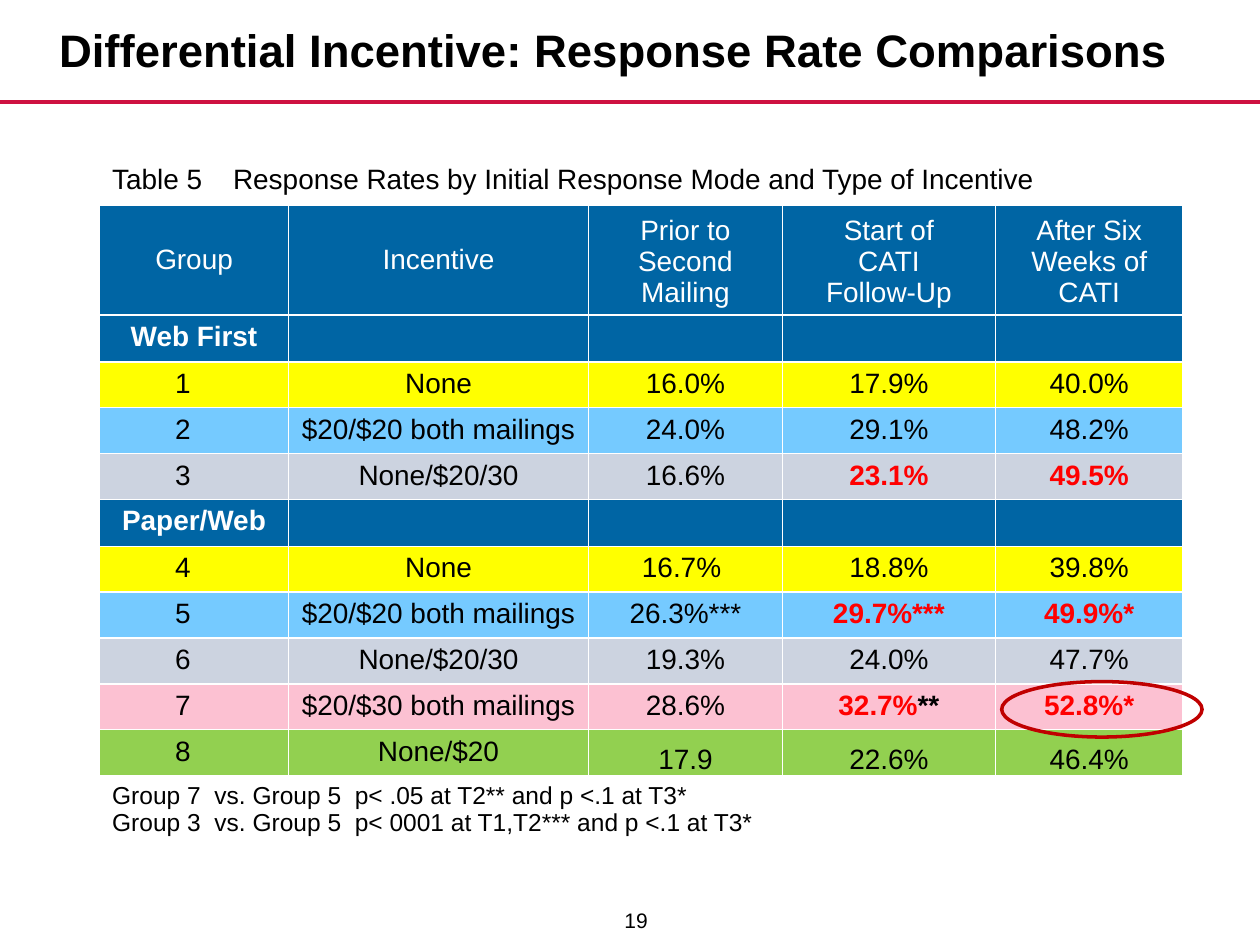
"""Build the slide comparing response rates by incentive group."""
import pptx
import pptx.dml.color
import pptx.enum.shapes
import pptx.enum.text
import pptx.oxml
import pptx.oxml.ns
import pptx.util
from lxml import etree

Inches = pptx.util.Inches
Pt = pptx.util.Pt
ALIGN = pptx.enum.text.PP_ALIGN
ANCHOR = pptx.enum.text.MSO_ANCHOR
FONT = "Arial"
COLORS = {
    "black": "000000", "white": "FFFFFF", "red": "FF0000", "crimson": "CE1141",
    "ring": "C00000", "header": "0065A4", "yellow": "FFFF00", "sky": "75CAFF",
    "gray": "CCD3E0", "pink": "FCC1D2", "green": "92D050",
}

TITLE = "Differential Incentive: Response Rate Comparisons"
PAGE_NUMBER = "19"
CAPTION = "Table 5\tResponse Rates by Initial Response Mode and Type of Incentive"
HEADINGS = [
    ["Group"], ["Incentive"], ["Prior to", "Second", "Mailing"],
    ["Start of", "CATI", "Follow-Up"], ["After Six\vWeeks of\vCATI"],
]
BODY = [
    ("header", ["Web First"]),
    ("yellow", ["1", "None", "16.0%", "17.9%", "40.0%"]),
    ("sky", ["2", "$20/$20 both mailings", "24.0%", "29.1%", "48.2%"]),
    ("gray", ["3", "None/$20/30", "16.6%", "23.1%", "49.5%"]),
    ("header", ["Paper/Web"]),
    ("yellow", ["4", "None", "16.7% ", "18.8%", "39.8%"]),
    ("sky", ["5", "$20/$20 both mailings", "26.3%***", "29.7%***", "49.9%*"]),
    ("gray", ["6", "None/$20/30", "19.3%", "24.0%", "47.7%"]),
    ("pink", ["7", "$20/$30 both mailings", "28.6%", "32.7%|**", "52.8%*"]),
    ("green", ["8", "None/$20", "17.9", "22.6%", "46.4%"]),
]
HIGHLIGHTS = {"23.1%", "49.5%", "29.7%***", "49.9%*", "32.7%|**", "52.8%*"}
FOOTNOTES = [
    "Group 7  vs. Group 5  p< .05 at T2** and p <.1 at T3*",
    "Group 3  vs. Group 5  p< 0001 at T1,T2*** and p <.1 at T3*",
]
COLUMN_WIDTHS = [1.5, 2.38, 1.54, 1.69, 1.49]
BODY_HEIGHT = 3.64
ROW_HEIGHTS = [0.38, 0.88] + [BODY_HEIGHT / len(BODY)] * len(BODY) + [1.09]


def rgb(name):
    return pptx.dml.color.RGBColor.from_string(COLORS[name])


def add_run(paragraph, text, size, color="black", bold=False):
    run = paragraph.add_run()
    run.text = text
    run.font.name = FONT
    run.font.size = Pt(size)
    run.font.bold = bold
    run.font.color.rgb = rgb(color)


def write_lines(frame, lines, size, color="black", bold=False, align=ALIGN.LEFT):
    for index, line in enumerate(lines):
        paragraph = frame.add_paragraph() if index else frame.paragraphs[0]
        paragraph.alignment = align
        for part_index, part in enumerate(line.split("\v")):
            if part_index:
                paragraph.add_line_break()
            add_run(paragraph, part, size, color, bold)


def add_text(slide, box, text, size, bold, align):
    frame = slide.shapes.add_textbox(*map(Inches, box)).text_frame
    frame.word_wrap = True
    frame.vertical_anchor = ANCHOR.MIDDLE
    write_lines(frame, [text], size, bold=bold, align=align)


def set_borders(cell, bottom=1):
    properties = cell._tc.get_or_add_tcPr()
    widths = {"lnL": 1, "lnR": 1, "lnT": 1, "lnB": bottom}
    for position, (side, width) in enumerate(widths.items()):
        border = pptx.oxml.parse_xml(
            f'<a:{side} {pptx.oxml.ns.nsdecls("a")} w="{Pt(width)}"><a:solidFill>'
            f'<a:srgbClr val="{COLORS["white"]}"/></a:solidFill></a:{side}>')
        properties.insert(position, border)


def fill_cell(cell, color):
    cell.fill.solid()
    cell.fill.fore_color.rgb = rgb(color)


def write_body_cell(cell, text, column, band):
    paragraph = cell.text_frame.paragraphs[0]
    paragraph.alignment = ALIGN.CENTER
    if not text:
        end = etree.SubElement(paragraph._p, pptx.oxml.ns.qn("a:endParaRPr"))
        end.set("sz", "1600")
    elif band == "header":
        add_run(paragraph, text, 16, "white", True)
    else:
        if column == 0:
            paragraph.alignment = ALIGN.LEFT
            paragraph.level = 1
            properties = paragraph._p.get_or_add_pPr()
            properties.set("marL", str(Inches(0.5)))
            properties.set("indent", "0")
        strong = text in HIGHLIGHTS
        value, _, mark = text.partition("|")
        add_run(paragraph, value, 16, "red" if strong else "black", strong)
        if mark:
            add_run(paragraph, mark, 16, bold=True)
    if band == "green" and column >= 2:
        cell.vertical_anchor = ANCHOR.BOTTOM
        cell.margin_left = cell.margin_right = cell.margin_top = Inches(0.01)
        cell.margin_bottom = 0


def add_rate_table(slide):
    columns, rows = len(COLUMN_WIDTHS), len(ROW_HEIGHTS)
    table = slide.shapes.add_table(
        rows, columns, Inches(0.79), Inches(1.24),
        Inches(sum(COLUMN_WIDTHS)), Inches(sum(ROW_HEIGHTS))).table
    table.first_row = table.horz_banding = False
    for column, width in zip(table.columns, COLUMN_WIDTHS):
        column.width = Inches(width)
    for row, height in zip(table.rows, ROW_HEIGHTS):
        row.height = Inches(height)

    for row in (0, rows - 1):
        table.cell(row, 0).merge(table.cell(row, columns - 1))
        for column in range(columns):
            table.cell(row, column).fill.background()
    caption, footer = table.cell(0, 0), table.cell(rows - 1, 0)
    caption.vertical_anchor = ANCHOR.MIDDLE
    properties = caption.text_frame.paragraphs[0]._p.get_or_add_pPr()
    tabs = etree.SubElement(properties, pptx.oxml.ns.qn("a:tabLst"))
    etree.SubElement(tabs, pptx.oxml.ns.qn("a:tab"), pos=str(Inches(0.96)), algn="l")
    write_lines(caption.text_frame, [CAPTION], 16)
    write_lines(footer.text_frame, FOOTNOTES, 14)

    for column, lines in enumerate(HEADINGS):
        cell = table.cell(1, column)
        cell.vertical_anchor = ANCHOR.MIDDLE if column < 2 else ANCHOR.BOTTOM
        fill_cell(cell, "header")
        write_lines(cell.text_frame, lines, 16, "white", align=ALIGN.CENTER)
    for row, (band, texts) in enumerate(BODY, start=2):
        for column in range(columns):
            cell = table.cell(row, column)
            fill_cell(cell, band)
            text = texts[column] if column < len(texts) else ""
            write_body_cell(cell, text, column, band)
    for row in range(rows):
        for column in range(columns):
            set_borders(table.cell(row, column), bottom=1 if row else 3)


def main():
    presentation = pptx.Presentation()
    presentation.slide_width, presentation.slide_height = Inches(10), Inches(7.5)
    slide = presentation.slides.add_slide(presentation.slide_layouts[6])

    rule = slide.shapes.add_connector(
        pptx.enum.shapes.MSO_CONNECTOR.STRAIGHT,
        0, Inches(0.81), Inches(10), Inches(0.81))
    rule.line.color.rgb = rgb("crimson")
    rule.line.width = Pt(2)
    etree.SubElement(rule._element.spPr, pptx.oxml.ns.qn("a:effectLst"))

    add_rate_table(slide)
    add_text(slide, (0, 0.03, 9.74, 0.73), TITLE, 26, True, ALIGN.CENTER)
    add_text(slide, (4.76, 7.1, 0.48, 0.4), PAGE_NUMBER, 12, False, ALIGN.RIGHT)

    ring = slide.shapes.add_shape(
        pptx.enum.shapes.MSO_SHAPE.OVAL, *map(Inches, (7.95, 5.41, 1.59, 0.44)))
    ring.shadow.inherit = False
    ring.fill.background()
    ring.line.color.rgb = rgb("ring")
    ring.line.width = Pt(2)
    presentation.save("out.pptx")


if __name__ == "__main__":
    main()
